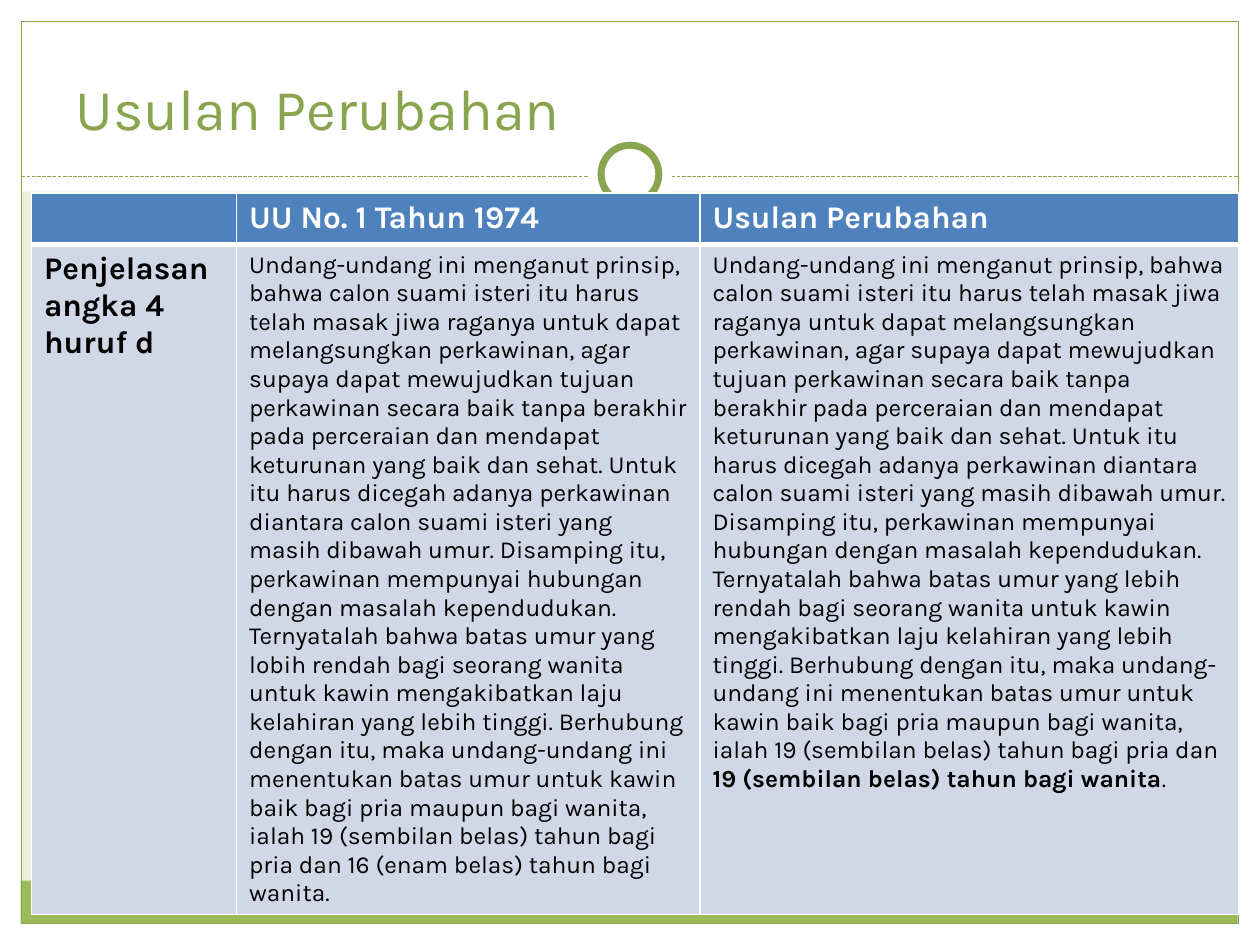
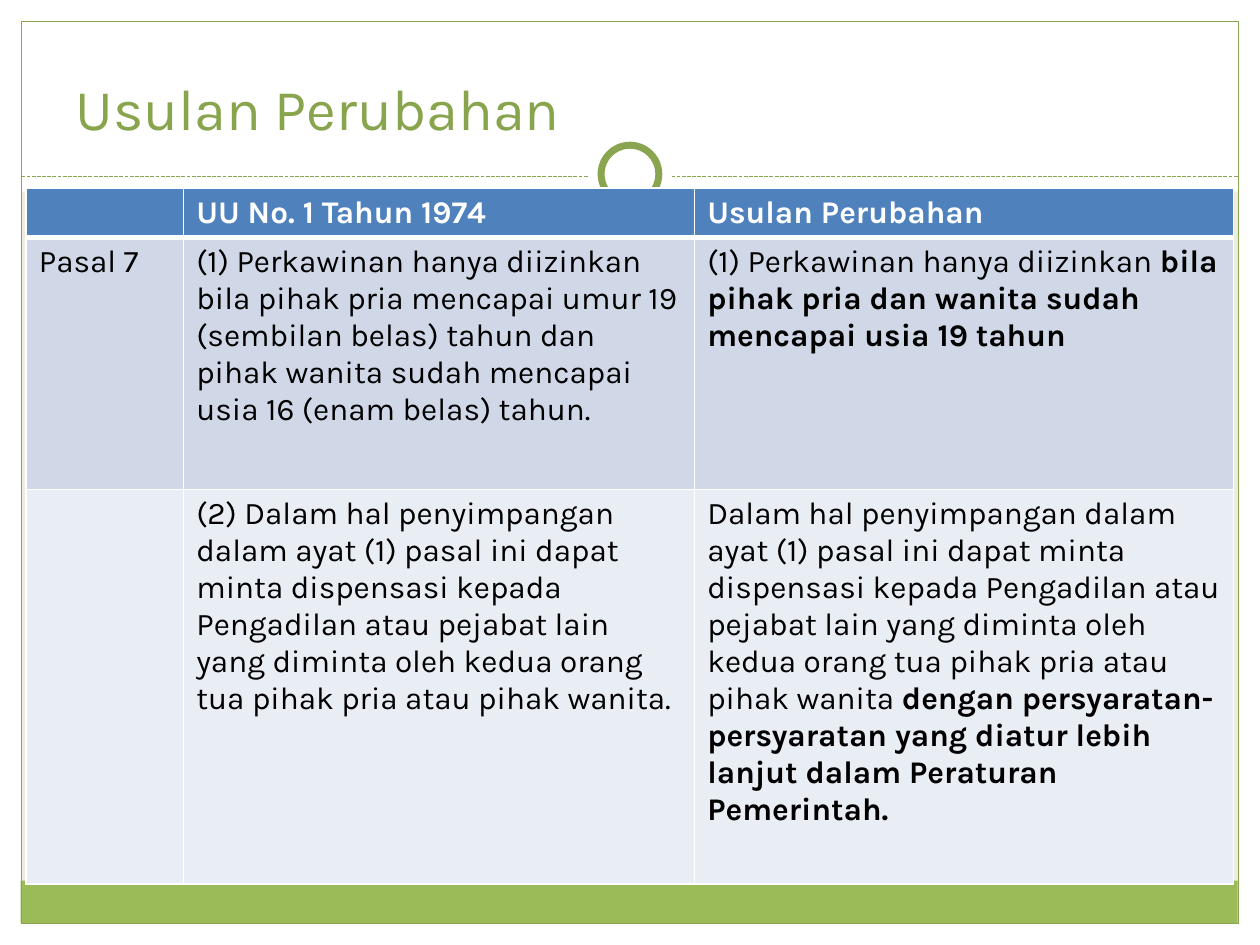
from lxml import etree
from pptx import Presentation
from pptx import util as u
from pptx.dml.color import RGBColor
from pptx.enum import dml, shapes, text
from pptx.oxml import ns

Pt = u.Pt
FONT = "Karla"
WHITE, BLACK, GREEN, LEAF = "FFFFFF", "000000", "89A54F", "9BBB59"
HEAD, BAND, PALE = "4F81BD", "D0D8E8", "E9EDF4"


def hue(code):
    return RGBColor.from_string(code)


def write(par, words, size, color, bold):
    run = par.add_run()
    run.text = words
    font = run.font
    font.name, font.size, font.bold = FONT, Pt(size), bold
    font.color.rgb = hue(color)


deck = Presentation()
deck.slide_width, deck.slide_height = Pt(720), Pt(540)
layout = deck.slide_layouts[5]
layout.background.fill.solid()
layout.background.fill.fore_color.rgb = hue("EEECE1")
pages = [deck.slides.add_slide(layout) for _ in range(2)]

RECT, OVAL = shapes.MSO_SHAPE.RECTANGLE, shapes.MSO_SHAPE.OVAL
frame = [
    (RECT, 0, 527.75, 720, 12.25, WHITE, None),
    (RECT, 0, 0, 720, 109.5, WHITE, None),
    (RECT, 0, 0, 12, 540, WHITE, None),
    (RECT, 708, 0, 12, 540, WHITE, None),
    (RECT, 11.75, 503.25, 695.5, 24.5, LEAF, None),
    (RECT, 12.25, 12.25, 695.5, 515.5, None, 0.75),
    (None, 12.25, 100.8, 695.5, 0, None, 0.75),
    (OVAL, 336, 75.6, 48, 48, WHITE, None),
    (OVAL, 343.5, 83, 33, 33, WHITE, 4),
]
for num, (kind, x, y, w, h, fill, line) in enumerate(frame):
    if kind is None:
        part = pages[0].shapes.add_connector(
            shapes.MSO_CONNECTOR.STRAIGHT, Pt(x), Pt(y), Pt(x + w), Pt(y))
        part.line.dash_style = dml.MSO_LINE.SQUARE_DOT
        etree.SubElement(part._element.spPr, ns.qn("a:effectLst"))
    else:
        part = pages[0].shapes.add_shape(kind, Pt(x), Pt(y), Pt(w), Pt(h))
        part.shadow.inherit = False
        if fill:
            part.fill.solid()
            part.fill.fore_color.rgb = hue(fill)
        else:
            part.fill.background()
    if line:
        part.line.width = Pt(line)
        part.line.color.rgb = hue(GREEN)
    else:
        part.line.fill.background()
    part._element.xpath("*/p:cNvPr")[0].set("id", str(20 + num))
    layout.shapes._spTree.insert(2 + num, part._element)

LAW = "UU No. 1 Tahun 1974"
PLAN = "Usulan Perubahan"
START = (
    "Undang-undang ini menganut prinsip, bahwa calon suami isteri itu harus "
    "telah masak jiwa raganya untuk dapat melangsungkan perkawinan, agar "
    "supaya dapat mewujudkan tujuan perkawinan secara baik tanpa berakhir "
    "pada perceraian dan mendapat keturunan yang baik dan sehat. Untuk itu "
    "harus dicegah adanya perkawinan diantara calon suami isteri yang masih "
    "dibawah umur. Disamping itu, perkawinan mempunyai hubungan dengan "
    "masalah kependudukan. Ternyatalah bahwa batas umur yang ")
REST = (
    " rendah bagi seorang wanita untuk kawin mengakibatkan laju kelahiran "
    "yang lebih tinggi. Berhubung dengan itu, maka undang-undang ini "
    "menentukan batas umur untuk kawin baik bagi pria maupun bagi wanita, "
    "ialah 19 (sembilan belas) tahun bagi pria dan ")
CASE = (
    "Dalam hal penyimpangan dalam ayat (1) pasal ini dapat minta dispensasi "
    "kepada Pengadilan atau pejabat lain yang diminta oleh kedua orang tua "
    "pihak pria atau pihak wanita")

top = [[[("", True)]], [[(LAW, True)]], [[(PLAN, True)]]]
grids = [
    dict(at=(18, 110.2), cols=(117.2, 264.8, 308), rows=(29.5, 376.5), size=14,
         cells=[
             top,
             [[[("Penjelasan angka 4 huruf d", True)]],
              [[(START + "lobih" + REST
                 + "16 (enam belas) tahun bagi wanita.", False)]],
              [[(START + "lebih" + REST, False),
                ("19 (sembilan belas) tahun bagi wanita", True),
                (".", False)]]],
         ]),
    dict(at=(15, 107.5), cols=(90, 292, 308), rows=(27.4, 144, 225.4), size=18,
         cells=[
             top,
             [[[("Pasal 7", False)]],
              [[("(1) Perkawinan hanya diizinkan bila pihak pria mencapai "
                 "umur 19 (sembilan belas) tahun dan pihak wanita sudah "
                 "mencapai", False)],
               [("usia 16 (enam belas) tahun.", False)]],
              [[("(1) Perkawinan hanya diizinkan ", False),
                ("bila pihak pria dan wanita sudah mencapai usia 19 tahun",
                 True)]]],
             [[[("", False)]],
              [[("(2) " + CASE + ".", False)]],
              [[(CASE + " ", False),
                ("dengan persyaratan-persyaratan yang diatur lebih lanjut "
                 "dalam Peraturan Pemerintah.", True)]]],
         ]),
]

for page, grid in zip(pages, grids):
    title = page.shapes.title
    title.left, title.top = Pt(36), Pt(21.6)
    title.width, title.height = Pt(354), Pt(63)
    box = title.text_frame
    box.word_wrap = True
    box.auto_size = text.MSO_AUTO_SIZE.NONE
    box.vertical_anchor = text.MSO_ANCHOR.BOTTOM
    box.paragraphs[0].alignment = text.PP_ALIGN.LEFT
    write(box.paragraphs[0], PLAN, 33, "88A44D", False)

    cols, rows = grid["cols"], grid["rows"]
    x, y = grid["at"]
    table = page.shapes.add_table(
        len(rows), len(cols), Pt(x), Pt(y), Pt(sum(cols)), Pt(sum(rows))).table
    for col, wide in zip(table.columns, cols):
        col.width = Pt(wide)
    for r, (row, high) in enumerate(zip(table.rows, rows)):
        row.height = Pt(high)
        for c, cell in enumerate(row.cells):
            cell.fill.solid()
            cell.fill.fore_color.rgb = hue((HEAD, BAND, PALE)[r])
            for n, side in enumerate("LRTB"):
                thick = 3 if r == 0 and side == "B" else 1
                edge = etree.Element(ns.qn("a:ln" + side), w=str(Pt(thick)))
                ink = etree.SubElement(edge, ns.qn("a:solidFill"))
                etree.SubElement(ink, ns.qn("a:srgbClr"), val=WHITE)
                cell._tc.tcPr.insert(n, edge)
            size = 18 if r == 0 or c == 0 else grid["size"]
            color = WHITE if r == 0 else BLACK
            body = cell.text_frame
            for n, runs in enumerate(grid["cells"][r][c]):
                par = body.add_paragraph() if n else body.paragraphs[0]
                for words, bold in runs:
                    write(par, words, size, color, bold)

deck.save("out.pptx")
